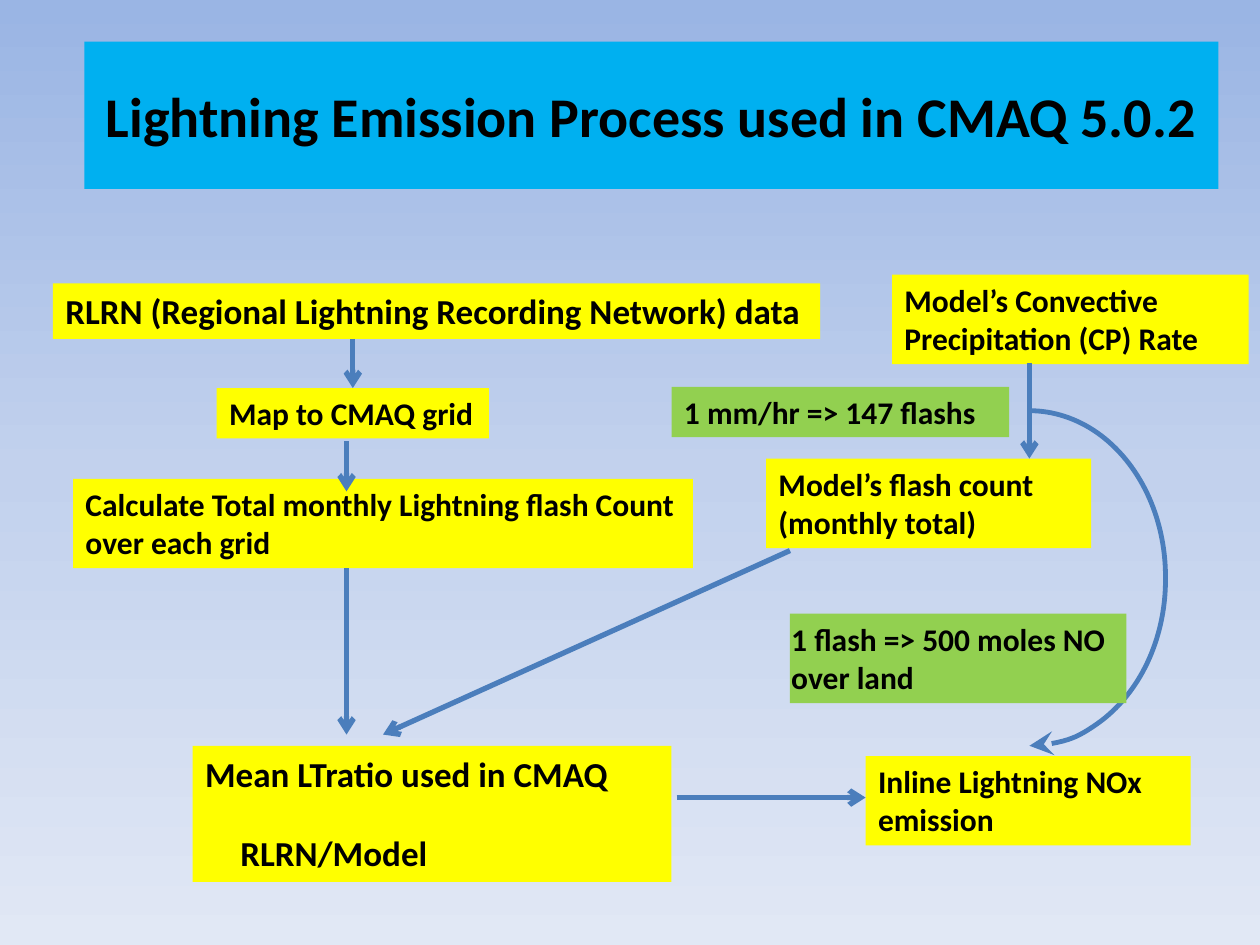
"""Build the slide on the lightning emission process in CMAQ."""
from copy import deepcopy

from pptx import Presentation
from pptx.dml.color import RGBColor
from pptx.enum.shapes import MSO_CONNECTOR, MSO_SHAPE
from pptx.enum.text import MSO_ANCHOR, MSO_AUTO_SIZE, PP_ALIGN
from pptx.oxml.xmlchemy import OxmlElement
from pptx.util import Inches, Pt

STRAIGHT = MSO_CONNECTOR.STRAIGHT
RIGHT_BRACKET = MSO_SHAPE.RIGHT_BRACKET
MIDDLE = MSO_ANCHOR.MIDDLE
CENTER, LEFT = PP_ALIGN.CENTER, PP_ALIGN.LEFT
GROW, FIXED = MSO_AUTO_SIZE.SHAPE_TO_FIT_TEXT, MSO_AUTO_SIZE.NONE

BLACK = RGBColor(0x00, 0x00, 0x00)
CYAN = RGBColor(0x00, 0xB0, 0xF0)
YELLOW = RGBColor(0xFF, 0xFF, 0x00)
GREEN = RGBColor(0x92, 0xD0, 0x50)
ARROW_BLUE = RGBColor(0x4B, 0x7E, 0xBC)
SKY = [
    (0, RGBColor(0x9A, 0xB5, 0xE4)),
    (0.5, RGBColor(0xC2, 0xD1, 0xED)),
    (1, RGBColor(0xE1, 0xE8, 0xF5)),
]

presentation = Presentation()
presentation.slide_width = Inches(10)
presentation.slide_height = Inches(7.5)
slide = presentation.slides.add_slide(presentation.slide_layouts[6])


def add_box(text, left, top, width, height, size=18, fill=YELLOW, wrap=True,
            autosize=GROW, align=LEFT, anchor=None, inset=0.1):
    box = slide.shapes.add_textbox(
        Inches(left), Inches(top), Inches(width), Inches(height))
    box.fill.solid()
    box.fill.fore_color.rgb = fill
    frame = box.text_frame
    frame.text = text
    frame.word_wrap = wrap
    frame.auto_size = autosize
    frame.vertical_anchor = anchor
    frame.margin_left = frame.margin_right = Inches(inset)
    for paragraph in frame.paragraphs:
        paragraph.alignment = align
        font = paragraph.runs[0].font
        font.name = "Calibri"
        font.size = Pt(size)
        font.bold = True
        font.color.rgb = BLACK
    return box


def style_arrow(shape, width, head, head_size="med"):
    shape.line.color.rgb = ARROW_BLUE
    shape.line.width = Pt(width)
    tail = OxmlElement("a:tailEnd")
    tail.set("type", head)
    tail.set("w", head_size)
    tail.set("len", head_size)
    shape.line._get_or_add_ln().append(tail)


background = slide.background.fill
background.gradient()
background.gradient_angle = 270
first_stop = slide.element.xpath(".//a:gs")[0]
first_stop.addnext(deepcopy(first_stop))
for stop, (position, color) in zip(background.gradient_stops, SKY):
    stop.position = position
    stop.color.rgb = color

add_box("Lightning Emission Process used in CMAQ 5.0.2", 0.67, 0.33, 9, 1.17,
        size=32, fill=CYAN, autosize=FIXED, align=CENTER, anchor=MIDDLE)
add_box("RLRN (Regional Lightning Recording Network) data",
        0.42, 2.25, 6.09, 0.44, size=20, wrap=False)
map_box = add_box("Map to CMAQ grid", 1.72, 3.08, 2.16, 0.4, wrap=False)
add_box("Calculate Total monthly Lightning flash Count over each grid",
        0.58, 3.8, 4.92, 0.71)
add_box("Model’s Convective Precipitation (CP) Rate", 7.08, 2.18, 2.83, 0.71)
add_box("Model’s flash count (monthly total)", 6.08, 3.64, 2.58, 0.71)
add_box("1 mm/hr => 147 flashs", 5.33, 3.07, 2.68, 0.4, fill=GREEN)
add_box("Inline Lightning NOx emission", 6.87, 6, 2.58, 0.71)

ratio_box = add_box("Mean LTratio used in CMAQ\nRLRN/Model",
                    1.53, 5.92, 3.8, 1.08, size=20)
formula = ratio_box.text_frame.paragraphs[1]
formula.space_before = Pt(21.6)
formula._p.get_or_add_pPr().set("marL", str(Inches(0.28)))

arrows = [
    (2.8, 2.69, 2.8, 3.08, map_box),
    (2.75, 3.5, 2.75, 3.9, None),
    (8.17, 2.88, 8.17, 3.64, None),
    (2.75, 4.51, 2.75, 5.83, None),
    (6.27, 4.37, 3.04, 5.83, None),
    (5.37, 6.33, 6.87, 6.33, None),
]
for start_x, start_y, end_x, end_y, target in arrows:
    connector = slide.shapes.add_connector(
        STRAIGHT, Inches(start_x), Inches(start_y), Inches(end_x), Inches(end_y))
    if target:
        connector.end_connect(target, 0)
    style_arrow(connector, 3, "arrow")
    connector._element.spPr.append(OxmlElement("a:effectLst"))

bracket = slide.shapes.add_shape(
    RIGHT_BRACKET, Inches(8.17), Inches(3.26), Inches(1.08), Inches(2.66))
bracket.adjustments[0] = 1.22
bracket.fill.background()
bracket.shadow.inherit = False
style_arrow(bracket, 2.75, "stealth", head_size="lg")

add_box("1 flash => 500 moles NO\nover land", 6.27, 4.87, 2.67, 0.71,
        fill=GREEN, inset=0.01)

presentation.save("out.pptx")
